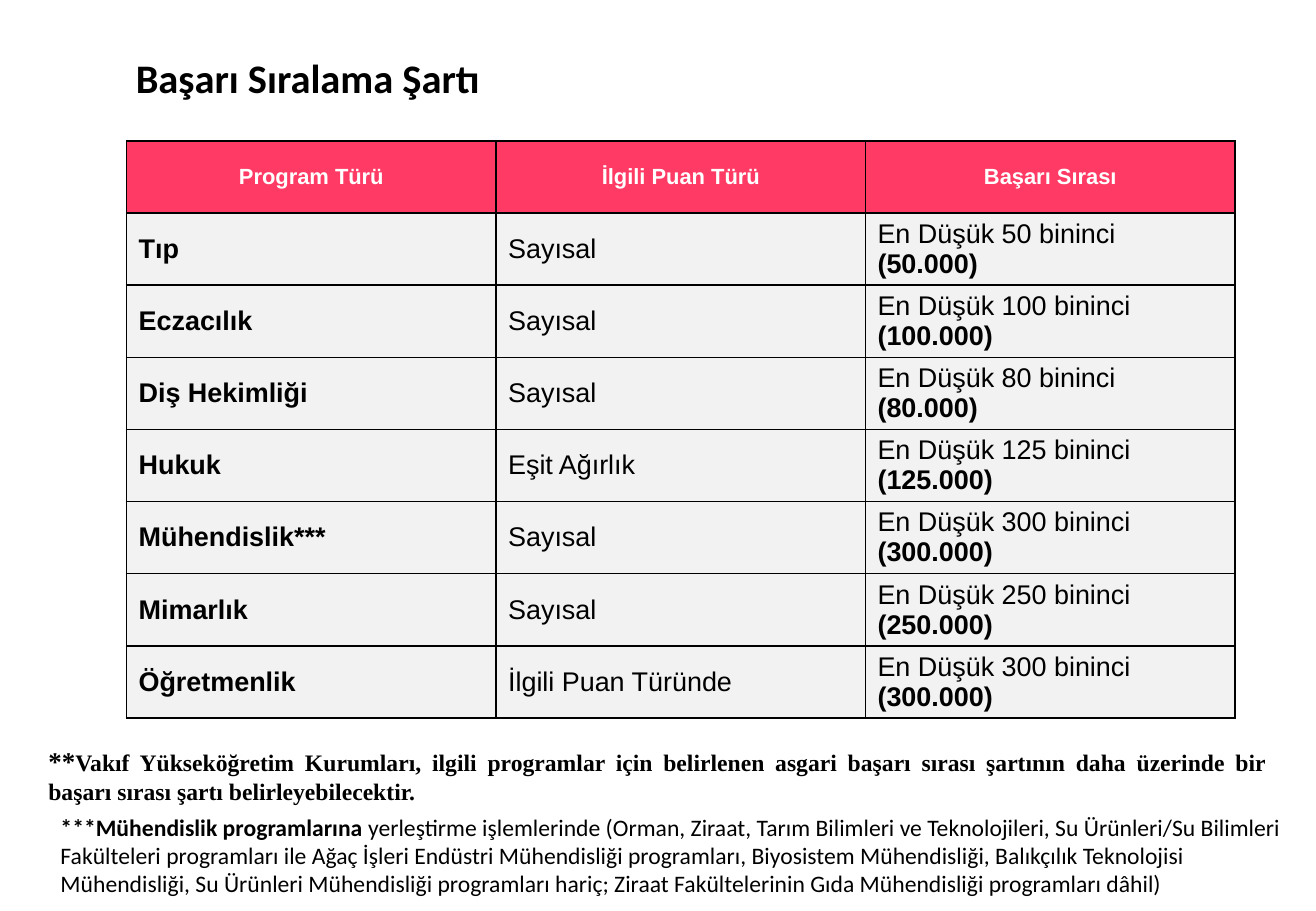
import pptx
import pptx.util
import pptx.dml.color
import pptx.enum.text
import pptx.oxml
import pptx.oxml.ns

Pt = pptx.util.Pt
ALIGN = pptx.enum.text.PP_ALIGN

COLORS = {"text": "000000", "header": "FF3A65", "header_text": "FFFFFF",
          "cell": "F2F2F2", "border": "000000"}

HEADINGS = ["Program Türü", "İlgili Puan Türü", "Başarı Sırası"]
# Program, score type, lowest rank in thousands
PROGRAMS = [
    ("Tıp", "Sayısal", 50),
    ("Eczacılık", "Sayısal", 100),
    ("Diş Hekimliği", "Sayısal", 80),
    ("Hukuk", "Eşit Ağırlık", 125),
    ("Mühendislik***", "Sayısal", 300),
    ("Mimarlık", "Sayısal", 250),
    ("Öğretmenlik", "İlgili Puan Türünde", 300),
]


def color(name):
    return pptx.dml.color.RGBColor.from_string(COLORS[name])


def set_font(font, name, size=None, bold=None, tint="text"):
    font.name = name
    font.color.rgb = color(tint)
    if size is not None:
        font.size = Pt(size)
    if bold is not None:
        font.bold = bold


def add_border(cell):
    properties = cell._tc.get_or_add_tcPr()
    for position, side in enumerate(("lnL", "lnR", "lnT", "lnB")):
        line = pptx.oxml.parse_xml(
            f'<a:{side} {pptx.oxml.ns.nsdecls("a")} w="{Pt(1)}"><a:solidFill>'
            f'<a:srgbClr val="{COLORS["border"]}"/></a:solidFill></a:{side}>')
        properties.insert(position, line)


def fill_cell(cell, runs, size, tint, background, align):
    """Write (text, bold) runs into a bordered cell."""
    cell.vertical_anchor = pptx.enum.text.MSO_ANCHOR.MIDDLE
    cell.fill.solid()
    cell.fill.fore_color.rgb = color(background)
    add_border(cell)
    paragraph = cell.text_frame.paragraphs[0]
    paragraph.alignment = align
    set_font(paragraph.font, "Arial", size, tint=tint)
    for text, bold in runs:
        run = paragraph.add_run()
        run.text = text
        run.font.bold = bold


def add_rank_table(slide, left, top, width, height):
    table = slide.shapes.add_table(
        len(PROGRAMS) + 1, len(HEADINGS),
        Pt(left), Pt(top), Pt(width), Pt(height)).table
    for column in table.columns:
        column.width = Pt(width / len(HEADINGS))
    for row in table.rows:
        row.height = Pt(height / (len(PROGRAMS) + 1))
    for column, heading in enumerate(HEADINGS):
        fill_cell(table.cell(0, column), [(heading, True)], 13,
                  "header_text", "header", ALIGN.CENTER)
    for row, (program, score, rank) in enumerate(PROGRAMS, start=1):
        contents = [
            [(program, True)],
            [(score, False)],
            [(f"En Düşük {rank} bininci ", False), (f"({rank}.000)", True)],
        ]
        for column, runs in enumerate(contents):
            fill_cell(table.cell(row, column), runs, 16, "text", "cell", ALIGN.LEFT)


def add_text(slide, left, top, width, height, font_name, runs, align):
    """Place one paragraph of (text, size, bold) runs."""
    box = slide.shapes.add_textbox(Pt(left), Pt(top), Pt(width), Pt(height))
    frame = box.text_frame
    frame.word_wrap = True
    frame.auto_size = pptx.enum.text.MSO_AUTO_SIZE.SHAPE_TO_FIT_TEXT
    paragraph = frame.paragraphs[0]
    paragraph.alignment = align
    set_font(paragraph.font, font_name)
    for text, size, bold in runs:
        run = paragraph.add_run()
        run.text = text
        run.font.size = Pt(size)
        run.font.bold = bold


def add_notes(slide, left, top, width, height):
    """Stack the two footnotes; the second is set in slightly."""
    first_height = 40.3
    add_text(slide, left, top, width - 18.6, first_height, "Times New Roman", [
        ("**", 16, True),
        ("Vakıf Yükseköğretim Kurumları, ilgili programlar için belirlenen asgari "
         "başarı sırası şartının daha üzerinde bir başarı sırası şartı "
         "belirleyebilecektir.", 14, True),
    ], ALIGN.JUSTIFY)
    add_text(slide, left + 7.2, top + first_height, width - 7.2,
             height - first_height, "Calibri", [
        ("***Mühendislik programlarına ", 14, True),
        ("yerleştirme işlemlerinde (Orman, Ziraat, Tarım Bilimleri ve Teknolojileri, "
         "Su Ürünleri/Su Bilimleri Fakülteleri programları ile Ağaç İşleri Endüstri "
         "Mühendisliği programları, Biyosistem Mühendisliği, Balıkçılık Teknolojisi "
         "Mühendisliği, Su Ürünleri Mühendisliği programları hariç; Ziraat "
         "Fakültelerinin Gıda Mühendisliği programları dâhil)", 14, False),
    ], ALIGN.LEFT)


def main():
    deck = pptx.Presentation()
    deck.slide_width, deck.slide_height = Pt(780), Pt(540)
    slide = deck.slides.add_slide(deck.slide_layouts[6])

    # Rank table
    add_rank_table(slide, 75, 83.5, 657, 341.6)
    # Footnotes
    add_notes(slide, 21.6, 437.8, 755.2, 98.6)
    # Title
    add_text(slide, 61.2, 28.1, 242.6, 36.7, "Calibri",
             [("Başarı Sıralama Şartı", 24, True)], ALIGN.CENTER)

    deck.save("out.pptx")


if __name__ == "__main__":
    main()
